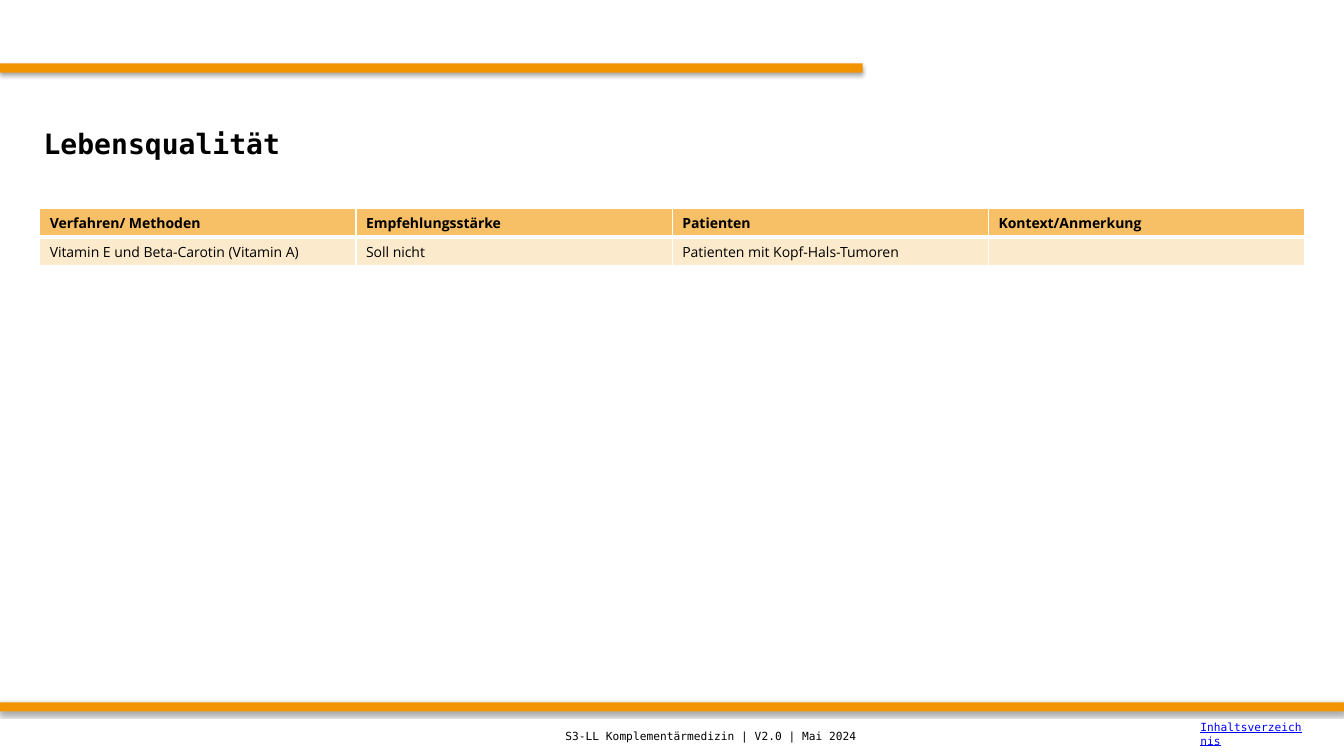
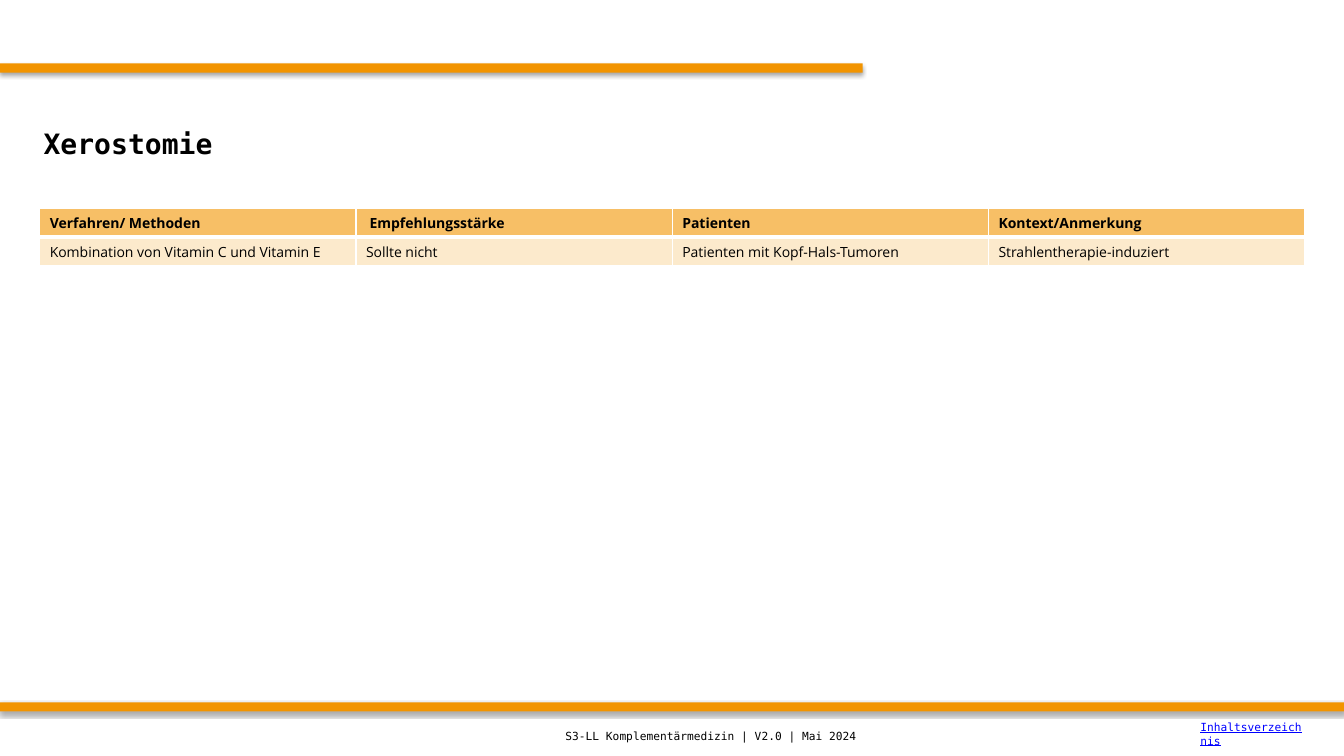
from dataclasses import dataclass
from lxml.etree import SubElement
from pptx import Presentation
from pptx.dml.color import RGBColor
from pptx.enum.shapes import MSO_SHAPE
from pptx.enum.text import MSO_ANCHOR
from pptx.oxml import parse_xml
from pptx.oxml.ns import nsdecls, qn
from pptx.util import Cm, Pt

FOOT = "S3-LL Komplementärmedizin | V2.0 | Mai 2024"
LINK = "Inhaltsverzeichnis"
PAGES = [
    ("Lebensqualität", [
        ("Verfahren/ Methoden", "Empfehlungsstärke", "Patienten", "Kontext/Anmerkung"),
        ("Vitamin E und Beta-Carotin (Vitamin A)", "Soll nicht",
         "Patienten mit Kopf-Hals-Tumoren", ""),
    ]),
    ("Xerostomie", [
        ("Verfahren/ Methoden", " Empfehlungsstärke", "Patienten", "Kontext/Anmerkung"),
        ("Kombination von Vitamin C und Vitamin E", "Sollte nicht",
         "Patienten mit Kopf-Hals-Tumoren", "Strahlentherapie-induziert"),
    ]),
]


@dataclass(frozen=True)
class Theme:
    band: str = "F29400"
    head: str = "F7BF66"
    body: str = "FCEACC"
    edge: str = "FFFFFF"
    ink: str = "000000"
    link: str = "0000FF"
    mono: str = "DejaVu Sans Mono"
    sans: str = "Open Sans"
    title: int = 20
    cell: int = 10
    foot: int = 8


T = Theme()
WIDE, HIGH = 33.87, 19.05
BANDS = [(1.6, 21.74), (17.7, WIDE)]
THICK = 0.23
LEFT, TOP, SPAN, ROW = 1, 5.26, 31.88, 0.72


def paint(fill, color):
    fill.solid()
    fill.fore_color.rgb = RGBColor.from_string(color)


def write(frame, text, size, font=T.mono, color=T.ink, bold=False, line=False, after=0):
    frame.word_wrap = True
    para = frame.paragraphs[0]
    para.space_after = Pt(after)
    if not text:
        SubElement(para._p, qn("a:endParaRPr"), sz=str(size * 100))
        return
    run = para.add_run()
    run.text = text
    face = run.font
    face.name, face.size, face.bold, face.underline = font, Pt(size), bold, line
    face.color.rgb = RGBColor.from_string(color)


def label(slide, text, area, **form):
    frame = slide.shapes.add_textbox(*map(Cm, area)).text_frame
    frame.vertical_anchor = MSO_ANCHOR.MIDDLE
    write(frame, text, **form)


def band(slide, top, width):
    bar = slide.shapes.add_shape(MSO_SHAPE.RECTANGLE, 0, Cm(top), Cm(width), Cm(THICK))
    paint(bar.fill, T.band)
    bar.line.fill.background()
    bar.shadow.inherit = False
    glow = bar._element.spPr.find(qn("a:effectLst"))
    glow.append(parse_xml(
        f'<a:outerShdw {nsdecls("a")} blurRad="{Pt(3.1)}" dist="{Pt(1.8)}" '
        f'dir="5400000" rotWithShape="0"><a:srgbClr val="{T.ink}">'
        f'<a:alpha val="35000"/></a:srgbClr></a:outerShdw>'))


def border(cell, base):
    props = cell._tc.get_or_add_tcPr()
    for side, width in zip("LRTB", (1, 1, 1, base)):
        props.append(parse_xml(
            f'<a:ln{side} {nsdecls("a")} w="{Pt(width)}"><a:solidFill>'
            f'<a:srgbClr val="{T.edge}"/></a:solidFill></a:ln{side}>'))


def grid(slide, rows):
    count = len(rows[0])
    area = map(Cm, (LEFT, TOP, SPAN, ROW * len(rows)))
    table = slide.shapes.add_table(len(rows), count, *area).table
    for col in table.columns:
        col.width = Cm(SPAN / count)
    for r, row in enumerate(rows):
        table.rows[r].height = Cm(ROW)
        head = r == 0
        for c, text in enumerate(row):
            cell = table.cell(r, c)
            border(cell, 3 if head else 1)
            paint(cell.fill, T.head if head else T.body)
            write(cell.text_frame, text, T.cell, font=T.sans, bold=head, after=5)


def main():
    deck = Presentation()
    deck.slide_width, deck.slide_height = Cm(WIDE), Cm(HIGH)
    for title, rows in PAGES:
        slide = deck.slides.add_slide(deck.slide_layouts[6])
        for top, width in BANDS:
            band(slide, top, width)
        label(slide, title, (0.85, 2.12, 32.17, 2.96), size=T.title, bold=True)
        grid(slide, rows)
        label(slide, FOOT, (14, 18.06, 14, 0.99), size=T.foot)
        label(slide, LINK, (30, 18, 3.1, 0.99), size=T.foot, color=T.link, line=True)
    deck.save("out.pptx")


if __name__ == "__main__":
    main()
